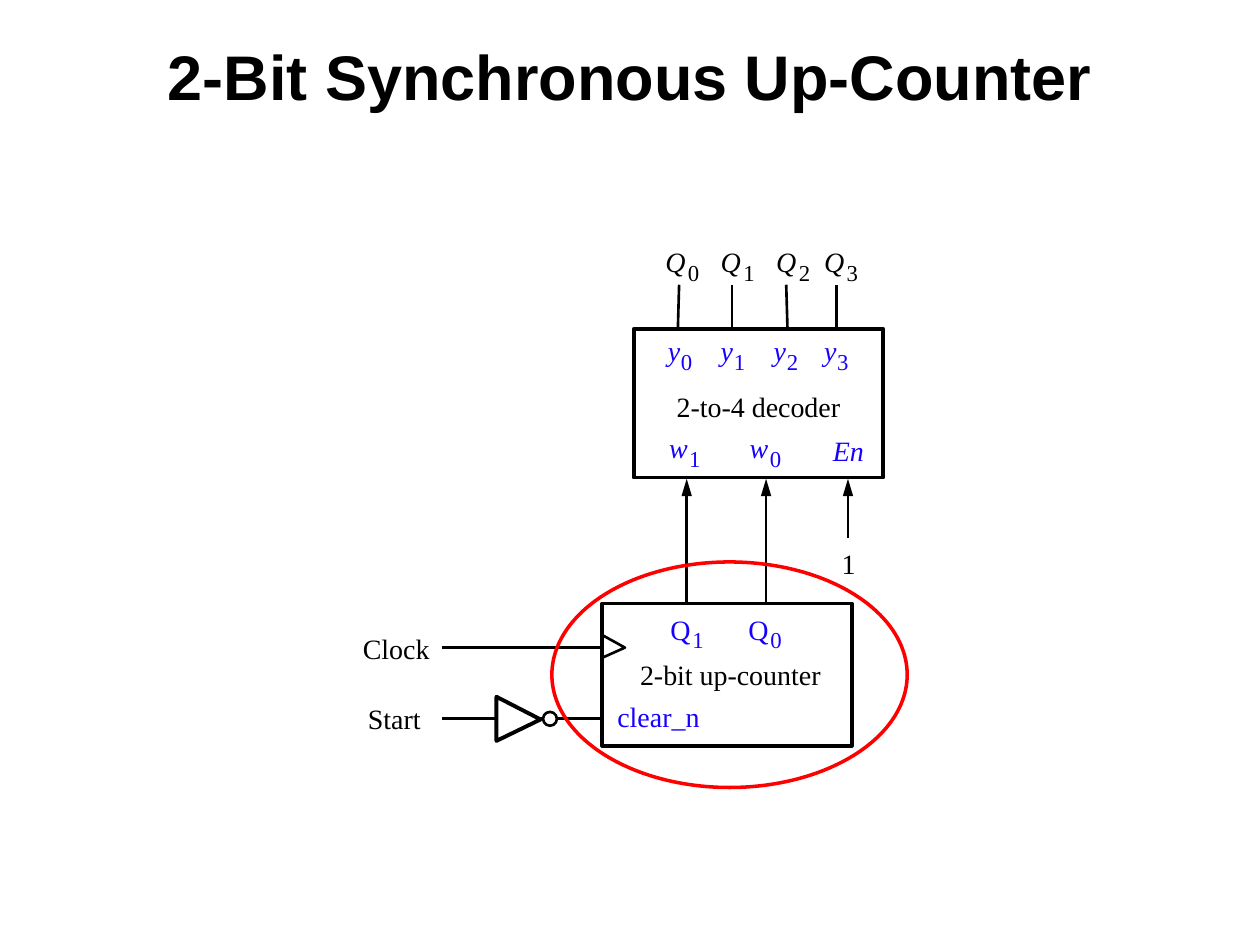
"""Build a slide of a 2-bit synchronous up-counter that drives a decoder."""
from typing import NamedTuple

from lxml import etree
from pptx import Presentation
from pptx.dml.color import RGBColor
from pptx.enum.shapes import MSO_CONNECTOR, MSO_SHAPE
from pptx.enum.text import MSO_AUTO_SIZE, PP_ALIGN
from pptx.oxml.ns import qn
from pptx.util import Inches, Pt

RECT, OVAL = MSO_SHAPE.RECTANGLE, MSO_SHAPE.OVAL
LINE = MSO_CONNECTOR.STRAIGHT
GROW, FIXED = MSO_AUTO_SIZE.SHAPE_TO_FIT_TEXT, MSO_AUTO_SIZE.NONE
LEFT, CENTER = PP_ALIGN.LEFT, PP_ALIGN.CENTER
COLS, ROWS = 100, 75
WIDE, HIGH = Inches(10), Inches(7.5)
INK = {"black": "000000", "blue": "1700FF", "red": "FF0000", "white": "FFFFFF"}
SERIF, SANS = "Times New Roman", "Arial"


class Box(NamedTuple):
    kind: int
    col: float
    row: float
    cols: float
    rows: float
    ink: str = "black"
    width: float = 2.25
    fill: str = ""


class Wire(NamedTuple):
    col: float
    row: float
    to_col: float
    to_row: float
    arrow: bool = False


class Label(NamedTuple):
    text: str
    col: float
    row: float
    cols: float
    ink: str = "black"
    italic: bool = False
    sub: str = ""
    shift: float = 0


BLOCKS = [Box(RECT, 47.8, 47.9, 19.8, 11.3), Box(RECT, 50.3, 26.1, 19.8, 11.8)]
BUBBLE = Box(OVAL, 43.1, 56.5, 1.1, 1.1, width=1.5, fill="white")
RING = Box(OVAL, 43.8, 44.6, 28.2, 17.9, "red", 2)
CLOCK = [(47.8, 52.2), (49.6, 51.4), (47.8, 50.4)]
GATE = [(42.9, 57.1), (39.4, 58.8), (39.4, 55.3)]
WIRES = [
    Wire(47.8, 57, 35.1, 57),
    Wire(35.1, 51.4, 47.8, 51.4),
    *(Wire(low, 26.1, top, 22.6) for low, top in
      [(53.8, 53.9), (58.1, 58.1), (62.5, 62.4), (66.4, 66.4)]),
    *(Wire(col, row, col, 38, True) for col, row in
      [(60.8, 48), (54.5, 48), (67.3, 42.7)]),
]
LABELS = [
    *(Label("Q", col, 19.4, 2.2, italic=True, sub=str(n), shift=1.8)
      for n, col in enumerate([52.8, 57.2, 61.6, 65.4])),
    *(Label("y", col, 26.5, 1.7, "blue", True, str(n), 1.05)
      for n, col in enumerate([53, 57.2, 61.4, 65.4])),
    *(Label("w", col, 34.2, 2.2, "blue", True, sub, 1.6)
      for sub, col in [("1", 53.1), ("0", 59.5)]),
    *(Label("Q", col, 48.6, 2.2, "blue", False, sub, 1.75)
      for sub, col in [("1", 53.2), ("0", 59.4)]),
    Label("En", 66.1, 34.4, 2.5, "blue", True),
    Label("clear_n", 49, 55.5, 7.2, "blue"),
    Label("2-to-4 decoder", 53.7, 30.9, 13.1),
    Label("2-bit up-counter", 50.8, 52.2, 14.6),
    Label("1", 66.8, 43.4, 1.7),
    Label("Clock", 28.8, 50.1, 5.3),
    Label("Start", 29.2, 55.7, 4.3),
]


def at_x(col: float) -> int:
    """Turn columns into a length."""
    return round(WIDE * col / COLS)


def at_y(row: float) -> int:
    """Turn rows into a length."""
    return round(HIGH * row / ROWS)


def tint(name: str) -> RGBColor:
    """Look up a colour."""
    return RGBColor.from_string(INK[name])


def style(shape, ink: str, width: float, fill: str) -> None:
    """Set the outline and fill of a shape."""
    shape.shadow.inherit = False
    shape.line.color.rgb = tint(ink)
    shape.line.width = Pt(width)
    if fill:
        shape.fill.solid()
        shape.fill.fore_color.rgb = tint(fill)
    else:
        shape.fill.background()


def draw_box(slide, box: Box) -> None:
    """Draw a preset shape."""
    shape = slide.shapes.add_shape(
        box.kind, at_x(box.col), at_y(box.row), at_x(box.cols), at_y(box.rows))
    style(shape, box.ink, box.width, box.fill)


def draw_path(slide, dots: list, close: bool, width: float, fill: str) -> None:
    """Draw an outline through grid points."""
    first, *rest = [(at_x(col), at_y(row)) for col, row in dots]
    path = slide.shapes.build_freeform(*first)
    path.add_line_segments(rest, close=close)
    style(path.convert_to_shape(), "black", width, fill)


def draw_wire(slide, wire: Wire) -> None:
    """Draw a line, with an arrowhead at its end if asked."""
    line = slide.shapes.add_connector(
        LINE, at_x(wire.col), at_y(wire.row), at_x(wire.to_col), at_y(wire.to_row))
    line.line.color.rgb = tint("black")
    line.line.width = Pt(1.5)
    if wire.arrow:
        etree.SubElement(line.line._get_or_add_ln(), qn("a:tailEnd"),
                         type="triangle", w="med", len="lg")
    etree.SubElement(line._element.spPr, qn("a:effectLst"))


def write(slide, text: str, col: float, row: float, cols: float, rows: float, *,
          size: float = 16, font: str = SERIF, ink: str = "black",
          bold: bool = False, italic: bool = False, align: int = LEFT,
          wrap: bool = False, inset: float = 0) -> None:
    """Write one line of text in a box."""
    shape = slide.shapes.add_textbox(at_x(col), at_y(row), at_x(cols), at_y(rows))
    frame = shape.text_frame
    frame.word_wrap = wrap
    frame.auto_size = FIXED if wrap else GROW
    frame.margin_left = frame.margin_right = at_x(inset)
    frame.margin_top = frame.margin_bottom = at_y(inset)
    para = frame.paragraphs[0]
    para.alignment = align
    run = para.add_run()
    run.text = text
    face = run.font
    face.name, face.size = font, Pt(size)
    face.bold, face.italic = bold, italic
    face.color.rgb = tint(ink)


def draw_label(slide, label: Label) -> None:
    """Write a label and its subscript."""
    write(slide, label.text, label.col, label.row, label.cols, 2.7,
          ink=label.ink, italic=label.italic)
    if label.sub:
        write(slide, label.sub, label.col + label.shift, label.row + 1.1,
              1.4, 2.2, size=13, ink=label.ink)


def main() -> None:
    """Build and save the deck."""
    deck = Presentation()
    deck.slide_width, deck.slide_height = WIDE, HIGH
    slide = deck.slides.add_slide(deck.slide_layouts[6])
    for box in BLOCKS:
        draw_box(slide, box)
    draw_path(slide, CLOCK, False, 1.5, "")
    for wire in WIRES:
        draw_wire(slide, wire)
    for label in LABELS:
        draw_label(slide, label)
    draw_path(slide, GATE, True, 2.25, "white")
    draw_box(slide, BUBBLE)
    write(slide, "2-Bit Synchronous Up-Counter", 0, 2.5, COLS, 6.7, size=36,
          font=SANS, bold=True, align=CENTER, wrap=True, inset=0.5)
    draw_box(slide, RING)
    deck.save("out.pptx")


if __name__ == "__main__":
    main()
